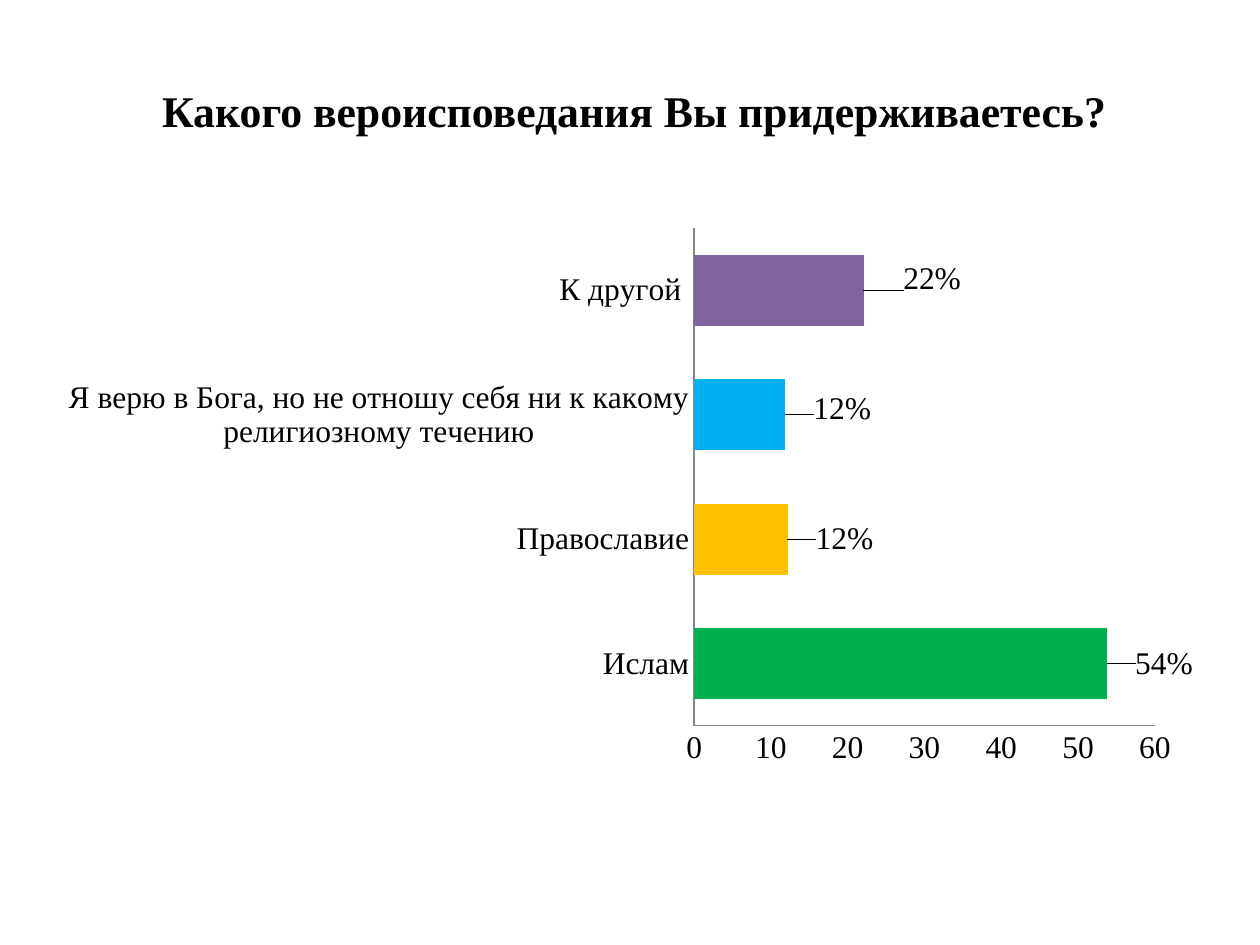
from lxml import etree
from pptx import Presentation
from pptx import util as u
from pptx.chart import data as chart_data
from pptx.dml.color import RGBColor
from pptx.enum import chart as ch, text
from pptx.oxml.ns import qn

BLACK = RGBColor(0x00, 0x00, 0x00)
AXIS_GREY = RGBColor(0x86, 0x86, 0x86)
GREEN = RGBColor(0x00, 0xB0, 0x50)
AMBER = RGBColor(0xFF, 0xC0, 0x00)
BLUE = RGBColor(0x00, 0xB0, 0xF0)
PURPLE = RGBColor(0x80, 0x64, 0xA2)

# Answer, share, bar colour, label, label shift (fractions of the chart)
ANSWERS = [
    ("Ислам", 53.8, GREEN, "54%", (0.02, 0)),
    ("Православие", 12.2, AMBER, "12%", (0.02, 0)),
    ("Я верю в Бога, но не отношу себя ни к какому религиозному течению",
     11.9, BLUE, "12%", (0.02, -0.01)),
    ("К другой ", 22.1, PURPLE, "22%", (0.03, -0.02)),
]


def make_layout(**values):
    """Return a manual chart layout holding the given settings."""
    layout = etree.Element(qn("c:layout"))
    manual = etree.SubElement(layout, qn("c:manualLayout"))
    for name, value in values.items():
        etree.SubElement(manual, qn(f"c:{name}")).set("val", str(value))
    return layout


class SlideBuilder:
    font_name = "Times New Roman"

    def __init__(self, presentation):
        self.slide = presentation.slides.add_slide(presentation.slide_layouts[5])

    def style(self, font, size, bold=False):
        font.name = self.font_name
        font.size = u.Pt(size)
        font.bold = bold
        font.color.rgb = BLACK

    def title(self, words, left, top, width, height):
        shape = self.slide.shapes.title
        shape.left, shape.top = u.Cm(left), u.Cm(top)
        shape.width, shape.height = u.Cm(width), u.Cm(height)
        frame = shape.text_frame
        frame.auto_size = text.MSO_AUTO_SIZE.SHAPE_TO_FIT_TEXT
        frame.vertical_anchor = text.MSO_ANCHOR.TOP
        paragraph = frame.paragraphs[0]
        paragraph.alignment = text.PP_ALIGN.CENTER
        run = paragraph.add_run()
        run.text = words
        self.style(run.font, 25, bold=True)

    def bar_chart(self, answers, left, top, width, height):
        data = chart_data.CategoryChartData()
        data.categories = [answer[0] for answer in answers]
        data.add_series("Series 1", [answer[1] for answer in answers])
        chart = self.slide.shapes.add_chart(
            ch.XL_CHART_TYPE.BAR_CLUSTERED, u.Cm(left), u.Cm(top),
            u.Cm(width), u.Cm(height), data).chart
        chart.has_legend = False
        chart.has_title = False
        self.style(chart.font, 18)

        # Axes
        for axis in (chart.category_axis, chart.value_axis):
            axis.has_major_gridlines = False
            axis.major_tick_mark = ch.XL_TICK_MARK.NONE
            axis.minor_tick_mark = ch.XL_TICK_MARK.NONE
            axis.format.line.color.rgb = AXIS_GREY
            axis.format.line.width = u.Pt(0.75)
        chart.value_axis.minimum_scale = 0
        chart.value_axis.maximum_scale = 60
        chart.value_axis.major_unit = 10

        # Bars and their labels
        plot = chart.plots[0]
        plot.gap_width = 75
        plot.vary_by_categories = False
        series = plot.series[0]
        series.data_labels.show_value = True
        for index, (_, _, colour, words, shift) in enumerate(answers):
            point = series.points[index]
            point.format.fill.solid()
            point.format.fill.fore_color.rgb = colour
            self.bar_label(point.data_label, words, shift)

        # Plot area inside the axes
        plot_area = chart.element.find(".//" + qn("c:plotArea"))
        for old in plot_area.findall(qn("c:layout")):
            plot_area.remove(old)
        plot_area.insert(0, make_layout(
            layoutTarget="inner", xMode="edge", yMode="edge",
            x=0.56, y=0.02, w=0.4, h=0.89))

    def bar_label(self, label, words, shift):
        run = label.text_frame.paragraphs[0].add_run()
        run.text = words
        self.style(run.font, 18)
        label.position = ch.XL_LABEL_POSITION.OUTSIDE_END
        rich_text = run.font._element.getparent()
        while rich_text.tag != qn("c:tx"):
            rich_text = rich_text.getparent()
        rich_text.addprevious(make_layout(x=shift[0], y=shift[1]))


def main():
    presentation = Presentation()
    presentation.slide_width = u.Cm(25.4)
    presentation.slide_height = u.Cm(19.05)
    builder = SlideBuilder(presentation)
    builder.title("Какого вероисповедания Вы придерживаетесь? ",
                  2.77, 1.57, 20.24, 1.32)
    builder.bar_chart(ANSWERS, 0.99, 4.37, 23.22, 11.28)
    presentation.save("out.pptx")


if __name__ == "__main__":
    main()
